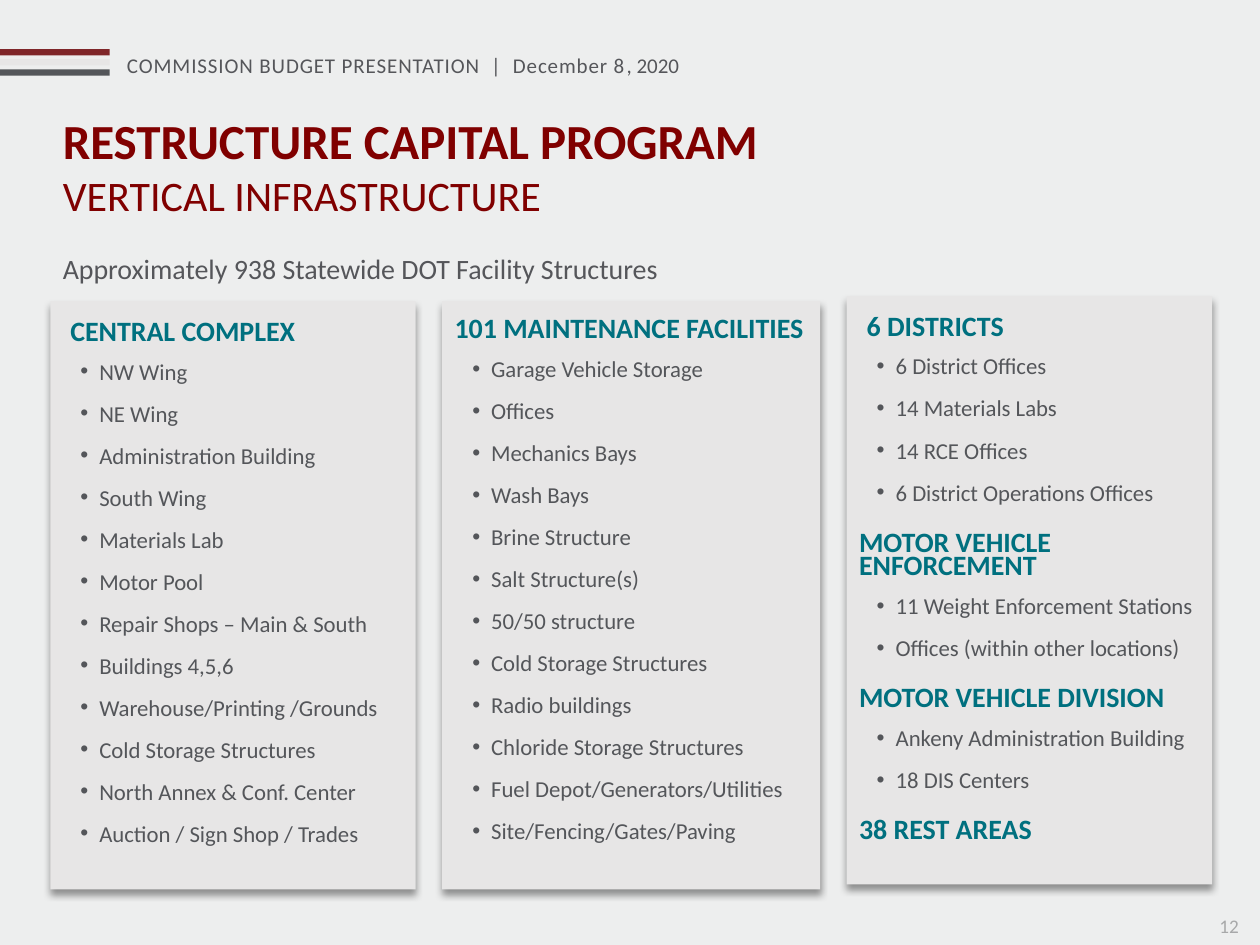
import pptx
import pptx.util
import pptx.dml.color
import pptx.enum.shapes
import pptx.enum.text
import pptx.oxml
from lxml import etree

Pt = pptx.util.Pt
RGBColor = pptx.dml.color.RGBColor

BACKGROUND = RGBColor(0xED, 0xEE, 0xEE)
SLATE = RGBColor(0x54, 0x56, 0x5A)
BODY = RGBColor(0x55, 0x56, 0x5A)
BRICK = RGBColor(0x7F, 0x26, 0x29)
MAROON = RGBColor(0x80, 0x00, 0x00)
PALE = RGBColor(0xE7, 0xE6, 0xE6)
TEAL = RGBColor(0x00, 0x70, 0x7F)
SILVER = RGBColor(0xA7, 0xA8, 0xA9)

UNIT = pptx.util.Inches(0.1)
COLUMNS, ROWS = 100, 75
NAMESPACE = 'xmlns:a="http://schemas.openxmlformats.org/drawingml/2006/main"'
SHADOW = (f'<a:effectLst {NAMESPACE}><a:outerShdw blurRad="{Pt(4)}" dist="{Pt(3)}" '
          'dir="5400000" algn="t" rotWithShape="0"><a:srgbClr val="000000">'
          '<a:alpha val="40000"/></a:srgbClr></a:outerShdw></a:effectLst>')

CENTRAL = [("CENTRAL COMPLEX", [
    "NW Wing", "NE Wing", "Administration Building", "South Wing",
    "Materials Lab", "Motor Pool", "Repair Shops – Main & South",
    "Buildings 4,5,6", "Warehouse/Printing /Grounds",
    "Cold Storage Structures", "North Annex & Conf. Center",
    "Auction / Sign Shop / Trades"])]
MAINTENANCE = [("101 MAINTENANCE FACILITIES", [
    "Garage Vehicle Storage", "Offices", "Mechanics Bays", "Wash Bays",
    "Brine Structure", "Salt Structure(s)", "50/50 structure",
    "Cold Storage Structures", "Radio buildings",
    "Chloride Storage Structures", "Fuel Depot/Generators/Utilities",
    "Site/Fencing/Gates/Paving"])]
DISTRICTS = [
    ("6 DISTRICTS", ["6 District Offices", "14 Materials Labs",
                     "14 RCE Offices", "6 District Operations Offices"]),
    ("MOTOR VEHICLE ENFORCEMENT", ["11 Weight Enforcement Stations",
                                   "Offices (within other locations)"]),
    ("MOTOR VEHICLE DIVISION", ["Ankeny Administration Building",
                                "18 DIS Centers"]),
    ("38 REST AREAS", [])]


def grid(box):
    """Turn a box in grid columns and rows into slide lengths."""
    return [round(share * UNIT) for share in box]


def style(paragraph, size, color, bold=False):
    """Format every run of a paragraph."""
    for run in paragraph.runs:
        run.font.name = "Calibri"
        run.font.size = Pt(size)
        run.font.bold = bold
        run.font.color.rgb = color


def add_block(slide, box, color):
    """Place a plain rectangle without an outline."""
    block = slide.shapes.add_shape(
        pptx.enum.shapes.MSO_SHAPE.RECTANGLE, *grid(box))
    block.shadow.inherit = False
    block.fill.solid()
    block.fill.fore_color.rgb = color
    block.line.fill.background()
    return block


def add_lines(slide, box, lines):
    """Place a text box with one paragraph per (text, size, color, bold) line."""
    frame = slide.shapes.add_textbox(*grid(box)).text_frame
    frame.word_wrap = True
    frame.text = "\n".join(line[0] for line in lines)
    for paragraph, (_, size, color, bold) in zip(frame.paragraphs, lines):
        style(paragraph, size, color, bold)
    return frame


def add_banner(slide, box):
    """Place the three stripes and the running header beside them."""
    left, top, width, _ = box
    for row, color in enumerate((BRICK, PALE, SLATE)):
        add_block(slide, (0, top + 0.2 + 0.8 * row, 8.7, 0.5), color)
    header = add_lines(slide, box, [
        ("COMMISSION BUDGET PRESENTATION  |  December 8", 12, BODY, False)])
    line = header.paragraphs[0]
    line.runs[0].font._element.set("spc", "50")
    line.add_run().text = ", 2020"
    style(line, 12, BODY)


def add_heading(paragraph, indent, first):
    """Format a section heading inside a panel."""
    paragraph._p.get_or_add_pPr().set("marL", str(pptx.util.Inches(indent)))
    paragraph.line_spacing = 0.7
    paragraph.space_before = Pt(0 if first else 12)
    paragraph.space_after = Pt(2)
    style(paragraph, 16, TEAL, True)


def add_bullet(paragraph):
    """Format a bulleted entry inside a panel."""
    paragraph.level = 1
    properties = paragraph._p.get_or_add_pPr()
    properties.set("marL", str(pptx.util.Inches(0.29)))
    properties.set("indent", str(pptx.util.Inches(-0.15)))
    paragraph.line_spacing = Pt(18)
    paragraph.space_before = Pt(2)
    paragraph.space_after = Pt(4)
    for mark in (f'<a:buClr {NAMESPACE}><a:srgbClr val="{SLATE}"/></a:buClr>',
                 f'<a:buFont {NAMESPACE} typeface="Arial"/>',
                 f'<a:buChar {NAMESPACE} char="•"/>'):
        properties.append(pptx.oxml.parse_xml(mark))
    style(paragraph, 13, SLATE)


def add_panel(slide, box, sections, indent, inset):
    """Place a shadowed panel of headings and bulleted entries."""
    panel = add_block(slide, box, PALE)
    effects = panel._element.spPr.find(pptx.oxml.ns.qn("a:effectLst"))
    effects.getparent().replace(effects, etree.fromstring(SHADOW))
    frame = panel.text_frame
    frame.word_wrap = True
    frame.vertical_anchor = pptx.enum.text.MSO_ANCHOR.TOP
    frame.margin_left = frame.margin_right = frame.margin_bottom = UNIT
    frame.margin_top = pptx.util.Inches(inset)
    frame.text = "\n".join(
        text for heading, entries in sections for text in (heading, *entries))
    paragraphs = iter(frame.paragraphs)
    for number, (_, entries) in enumerate(sections):
        add_heading(next(paragraphs), 0 if number else indent, number == 0)
        for _ in entries:
            add_bullet(next(paragraphs))
    for paragraph in frame.paragraphs:
        paragraph.alignment = pptx.enum.text.PP_ALIGN.LEFT


def main():
    """Build the slide and save it."""
    deck = pptx.Presentation()
    deck.slide_width, deck.slide_height = COLUMNS * UNIT, ROWS * UNIT
    slide = deck.slides.add_slide(deck.slide_layouts[6])
    slide.background.fill.solid()
    slide.background.fill.fore_color.rgb = BACKGROUND

    add_banner(slide, (9.1, 3.7, 48.4, 5))
    add_lines(slide, (4, 8.3, 86.8, 9), [
        ("RESTRUCTURE CAPITAL PROGRAM", 28, MAROON, True),
        ("VERTICAL INFRASTRUCTURE", 24, MAROON, False)])
    add_lines(slide, (4, 19.5, 93.7, 3.7), [
        ("Approximately 938 Statewide DOT Facility Structures", 16, BODY, False)])
    add_panel(slide, (4, 23.9, 29, 46.7), CENTRAL, 0.06, 0.17)
    add_panel(slide, (35.1, 23.9, 30, 46.7), MAINTENANCE, 0, 0.15)
    add_panel(slide, (67.2, 23.5, 29, 46.7), DISTRICTS, 0.06, 0.17)
    add_lines(slide, (95.8, 72.1, 4.2, 2.9), [("12", 11, SILVER, False)])
    deck.save("out.pptx")


if __name__ == "__main__":
    main()
